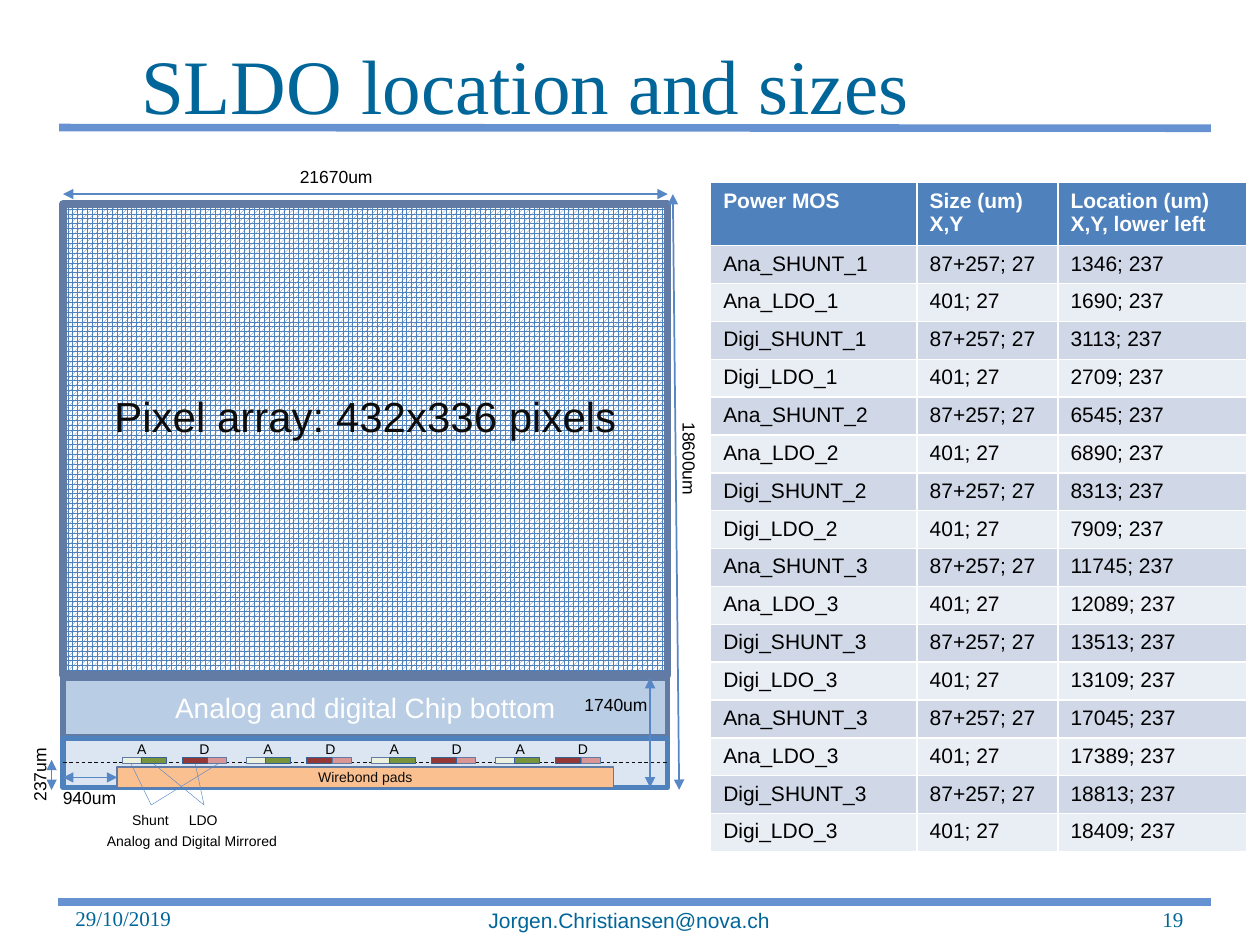
from dataclasses import dataclass
from itertools import product

from lxml.etree import SubElement
from pptx import Presentation
from pptx.dml.color import RGBColor
from pptx.enum.dml import MSO_LINE_DASH_STYLE as DASH, MSO_PATTERN_TYPE as PATTERN
from pptx.enum.shapes import MSO_CONNECTOR as CONN, MSO_SHAPE as SHAPE
from pptx.enum.text import MSO_ANCHOR as ANCHOR, PP_ALIGN as ALIGN
from pptx.oxml.ns import qn
from pptx.util import Pt

TEAL, BLUE, SLATE, ARROW = "006699", "4F81BD", "617BA5", "5887C6"
INK, BLACK, WHITE = "0D0D0D", "000000", "FFFFFF"
CHIP_LEFT, CHIP_WIDTH = 36, 345.6
CHIP_RIGHT = CHIP_LEFT + CHIP_WIDTH


@dataclass
class Box:
    x: float
    y: float
    w: float
    h: float


@dataclass
class Label:
    text: str
    box: Box
    size: float = 8
    rotation: float = 0


@dataclass
class Link:
    x1: float
    y1: float
    x2: float
    y2: float
    color: str = ARROW
    width: float = 1
    arrows: bool = False


@dataclass
class Device:
    dx: float
    width: float
    fill: str
    line: str


def rgb(value: str) -> RGBColor:
    return RGBColor.from_string(value)


def style(p, size: float, color: str, font: str = "Arial", align=ALIGN.LEFT) -> None:
    p.font.size, p.font.name = Pt(size), font
    p.font.color.rgb = rgb(color)
    p.alignment = align


def add_rect(shapes, box: Box, fill: str, line: str, width: float):
    sp = shapes.add_shape(SHAPE.RECTANGLE, Pt(box.x), Pt(box.y), Pt(box.w), Pt(box.h))
    sp.shadow.inherit = False
    sp.fill.solid()
    sp.fill.fore_color.rgb = rgb(fill)
    sp.line.color.rgb = rgb(line)
    sp.line.width = Pt(width)
    return sp


def write_centred(sp, text: str, size: float, color: str, bottom: float = 0) -> None:
    tf = sp.text_frame
    tf.text, tf.word_wrap, tf.vertical_anchor = text, True, ANCHOR.MIDDLE
    tf.margin_top, tf.margin_bottom = 0, Pt(bottom)
    style(tf.paragraphs[0], size, color, align=ALIGN.CENTER)


def add_text(s, box: Box, text: str, size: float, color: str, font: str = "Arial",
             align=ALIGN.LEFT, anchor=ANCHOR.TOP, wrap: bool = False):
    sp = s.shapes.add_textbox(Pt(box.x), Pt(box.y), Pt(box.w), Pt(box.h))
    tf = sp.text_frame
    tf.text, tf.word_wrap, tf.vertical_anchor = text, wrap, anchor
    style(tf.paragraphs[0], size, color, font, align)
    return sp


def add_link(s, link: Link):
    cn = s.shapes.add_connector(CONN.STRAIGHT, Pt(link.x1), Pt(link.y1), Pt(link.x2), Pt(link.y2))
    cn.line.color.rgb = rgb(link.color)
    cn.line.width = Pt(link.width)
    if link.arrows:
        ln = cn.line._get_or_add_ln()
        for end in ("a:headEnd", "a:tailEnd"):
            SubElement(ln, qn(end), type="triangle")
    SubElement(cn._element.spPr, qn("a:effectLst"))
    return cn


def add_mos_table(s, rows: list[tuple[str, str, str]]) -> None:
    table = s.shapes.add_table(len(rows), 3, Pt(406.1), Pt(104.4), Pt(306.5), Pt(365)).table
    for column, width in zip(table.columns, (118, 80.5, 108)):
        column.width = Pt(width)
    for i, values in enumerate(rows):
        table.rows[i].height = Pt(20.7 if i else 34.3)
        fill = (("E9EDF4", "D0D8E8")[i % 2]) if i else BLUE
        for cell, value in zip(table.rows[i].cells, values):
            cell.text = value
            cell.fill.solid()
            cell.fill.fore_color.rgb = rgb(fill)
            p = cell.text_frame.paragraphs[0]
            style(p, 12, BLACK if i else WHITE)
            p.font.bold = i == 0


def main() -> None:
    prs = Presentation()
    prs.slide_width, prs.slide_height = Pt(720), Pt(540)
    s = prs.slides.add_slide(prs.slide_layouts[5])

    # Rules, title and footer
    add_link(s, Link(33.8, 72.9, 692, 73.3, "6792D1", 4.33))
    add_link(s, Link(33.4, 515.5, 692, 515.5, "6792D1", 4.33))
    title = s.shapes.title
    title.left, title.top, title.width, title.height = Pt(73.4), Pt(17.3), Pt(558.7), Pt(56.9)
    tf = title.text_frame
    tf.text, tf.vertical_anchor, tf.margin_bottom = "SLDO location and sizes", ANCHOR.BOTTOM, 0
    style(tf.paragraphs[0], 44, TEAL, "Times New Roman")
    for box, text, font, align in (
        (Box(36, 511.2, 167.8, 24.5), "29/10/2019", "Times New Roman", ALIGN.LEFT),
        (Box(245.5, 517, 228.2, 19.4), "Jorgen.Christiansen@nova.ch", "Arial", ALIGN.CENTER),
        (Box(515.5, 517, 167.8, 18.7), "19", "Times New Roman", ALIGN.RIGHT),
    ):
        add_text(s, box, text, 12, TEAL, font, align, ANCHOR.BOTTOM, wrap=True)

    # Chip floor plan
    pixels = add_rect(s.shapes, Box(CHIP_LEFT, 116.6, CHIP_WIDTH, 269.3), WHITE, SLATE, 4.33)
    pixels.fill.patterned()
    pixels.fill.pattern = PATTERN.SPHERE
    pixels.fill.fore_color.rgb, pixels.fill.back_color.rgb = rgb(BLUE), rgb(WHITE)
    write_centred(pixels, "Pixel array: 432x336 pixels", 24, INK, bottom=27.6)
    bottom = add_rect(s.shapes, Box(CHIP_LEFT, 387.4, CHIP_WIDTH, 33.8), "B9CDE5", SLATE, 3)
    write_centred(bottom, "Analog and digital Chip bottom", 16, WHITE)
    strip = add_rect(s.shapes, Box(CHIP_LEFT, 421.9, CHIP_WIDTH, 28.1), "DCE6F2", BLUE, 3)
    pads = add_rect(s.shapes, Box(67, 438.5, 283.7, 11.5), "FAC090", SLATE, 1)
    write_centred(pads, "Wirebond pads", 8, INK)

    # Power MOS table
    locations = (1346, 1690, 3113, 2709, 6545, 6890, 8313, 7909,
                 11745, 12089, 13513, 13109, 17045, 17389, 18813, 18409)
    sizes = {"SHUNT": "87+257; 27", "LDO": "401; 27"}
    kinds = product((1, 2, 3, 3), ("Ana", "Digi"), sizes)
    rows = [("Power MOS", "Size (um)\vX,Y", "Location (um)\vX,Y, lower left")]
    rows += [(f"{domain}_{mos}_{n}", sizes[mos], f"{x}; 237")
             for (n, domain, mos), x in zip(kinds, locations)]
    add_mos_table(s, rows)

    # Device row with its centre line
    axis = add_link(s, Link(CHIP_LEFT, 436, CHIP_RIGHT, 436, INK, 0.5))
    axis.line.dash_style = DASH.DASH
    axis.begin_connect(strip, 1)
    axis.end_connect(strip, 3)
    devices = (Device(0, 10.8, "EBF1DE", SLATE), Device(10.8, 14.4, "77933C", "376092"),
               Device(49, 10.8, "D99694", SLATE), Device(34.4, 14.4, "953735", "376092"))
    for i in range(4):
        group = s.shapes.add_group_shape()
        for d in devices:
            box = Box(69.8 + 71.1 * i + d.dx, 432.6, d.width, 3.6)
            add_rect(group.shapes, box, d.fill, d.line, 0.5)

    # Labels
    labels = [Label(letter, Box(x + 72.1 * i, 419.4, 20.2, 17.3))
              for letter, x in (("A", 71.3), ("D", 106.8)) for i in range(4)]
    labels += [
        Label("Shunt", Box(68.4, 460, 36, 17.3)),
        Label("LDO", Box(100.8, 460, 31, 17.3)),
        Label("Analog and Digital Mirrored", Box(54, 472.3, 113, 17.3)),
        Label("940um", Box(28.8, 446.4, 45.4, 19.4), 10),
        Label("237um", Box(0, 432.7, 45.4, 19.4), 10, 270),
        Label("21670um", Box(164.2, 91.4, 56.2, 19.4), 10),
        Label("18600um", Box(365.8, 252.7, 56.2, 19.4), 10, 90),
        Label("1740um", Box(326.9, 393.1, 51.1, 19.4), 10),
    ]
    for label in labels:
        add_text(s, label.box, label.text, label.size, BLACK).rotation = label.rotation

    # Dimension arrows
    pad_offset = add_link(s, Link(CHIP_LEFT, 444.25, 67, 444.25, arrows=True))
    pad_offset.end_connect(pads, 1)
    for ends in ((29.5, 451.4, 29.5, 434.2), (CHIP_LEFT, 110.9, CHIP_RIGHT, 110.9),
                 (384.5, 110.9, 388.1, 451.4), (371.5, 387.4, 371.5, 450)):
        add_link(s, Link(*ends, arrows=True))

    # Leaders from devices to Shunt and LDO
    for x1, x2 in ((74.9, 86.4), (124.6, 86.4), (87.8, 116.6), (111.6, 116.6)):
        add_link(s, Link(x1, 436.5, x2, 460, width=0.25))

    prs.save("out.pptx")


if __name__ == "__main__":
    main()
